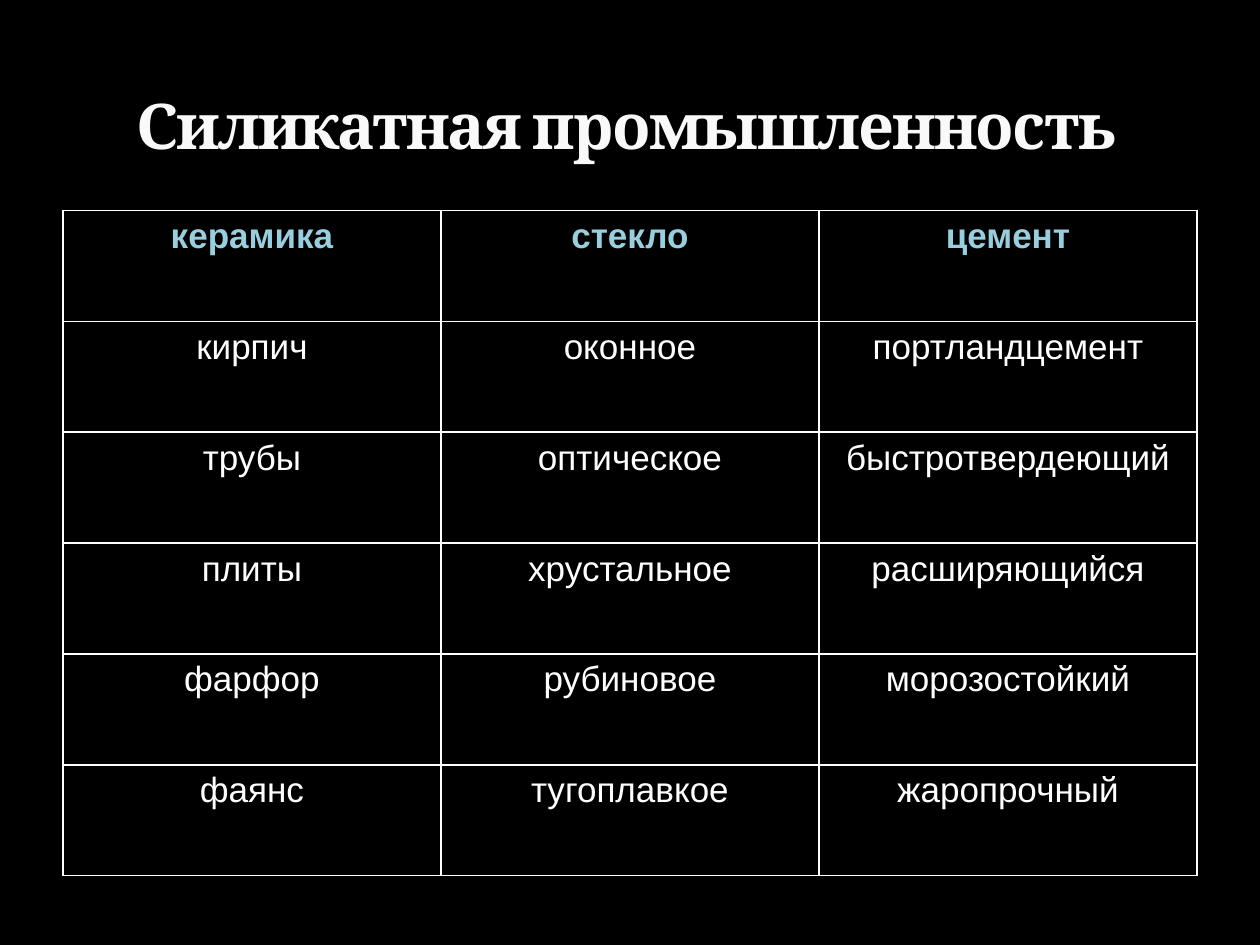
from lxml import etree
from pptx import Presentation
from pptx.dml.color import RGBColor
from pptx.enum.text import MSO_ANCHOR, PP_ALIGN
from pptx.oxml.ns import qn
from pptx.util import Inches, Pt

CENTER = PP_ALIGN.CENTER
BOTTOM = MSO_ANCHOR.BOTTOM
TITLE_ONLY = 5

TITLE = "Силикатная промышленность"
PRODUCTS = {
    "керамика": ["кирпич", "трубы", "плиты", "фарфор", "фаянс"],
    "стекло": ["оконное", "оптическое", "хрустальное", "рубиновое", "тугоплавкое"],
    "цемент": ["портландцемент", "быстротвердеющий", "расширяющийся", "морозостойкий", "жаропрочный"],
}
COLORS = {"background": "000000", "title": "F9F9F9", "header": "98CEDE", "body": "FFFFFF", "border": "FFFFFF"}
FORMATS = {
    "title": {"name": "Cambria", "size": Pt(36), "bold": True},
    "header": {"name": "Arial", "size": Pt(20), "bold": True},
    "body": {"name": "Arial", "size": Pt(20), "bold": False},
}
COLUMN_WIDTH = 3
ROW_HEIGHT = 0.88


def write_text(text_frame, text, style):
    paragraph = text_frame.paragraphs[0]
    paragraph.alignment = CENTER
    run = paragraph.add_run()
    run.text = text
    for attribute, value in FORMATS[style].items():
        setattr(run.font, attribute, value)
    run.font.color.rgb = RGBColor.from_string(COLORS[style])
    return run


def add_borders(cell):
    properties = cell._tc.get_or_add_tcPr()
    for position, side in enumerate(("a:lnL", "a:lnR", "a:lnT", "a:lnB")):
        line = etree.Element(qn(side), w=str(Pt(1)))
        fill = etree.SubElement(line, qn("a:solidFill"))
        etree.SubElement(fill, qn("a:srgbClr"), val=COLORS["border"])
        properties.insert(position, line)


def add_title(slide):
    title = slide.shapes.title
    title.left, title.top, title.width, title.height = map(Inches, (0.47, 0.23, 9, 1.11))
    title.text_frame.vertical_anchor = BOTTOM
    title.text_frame.word_wrap = True
    run = write_text(title.text_frame, TITLE, "title")
    run.font._element.set("spc", "-100")


def add_product_table(slide):
    rows = [list(PRODUCTS), *zip(*PRODUCTS.values())]
    columns = len(PRODUCTS)
    frame = slide.shapes.add_table(
        len(rows), columns, Inches(0.5), Inches(1.67),
        Inches(COLUMN_WIDTH * columns), Inches(ROW_HEIGHT * len(rows)),
    )
    table = frame.table
    table.first_row = False
    table.horz_banding = False
    for column in table.columns:
        column.width = Inches(COLUMN_WIDTH)
    for row_index, words in enumerate(rows):
        table.rows[row_index].height = Inches(ROW_HEIGHT)
        style = "body" if row_index else "header"
        for column_index, word in enumerate(words):
            cell = table.cell(row_index, column_index)
            cell.fill.background()
            add_borders(cell)
            write_text(cell.text_frame, word, style)


def main():
    presentation = Presentation()
    presentation.slide_width = Inches(10)
    presentation.slide_height = Inches(7.5)
    slide = presentation.slides.add_slide(presentation.slide_layouts[TITLE_ONLY])
    background = slide.background.fill
    background.solid()
    background.fore_color.rgb = RGBColor.from_string(COLORS["background"])
    add_product_table(slide)
    add_title(slide)
    presentation.save("out.pptx")


if __name__ == "__main__":
    main()
